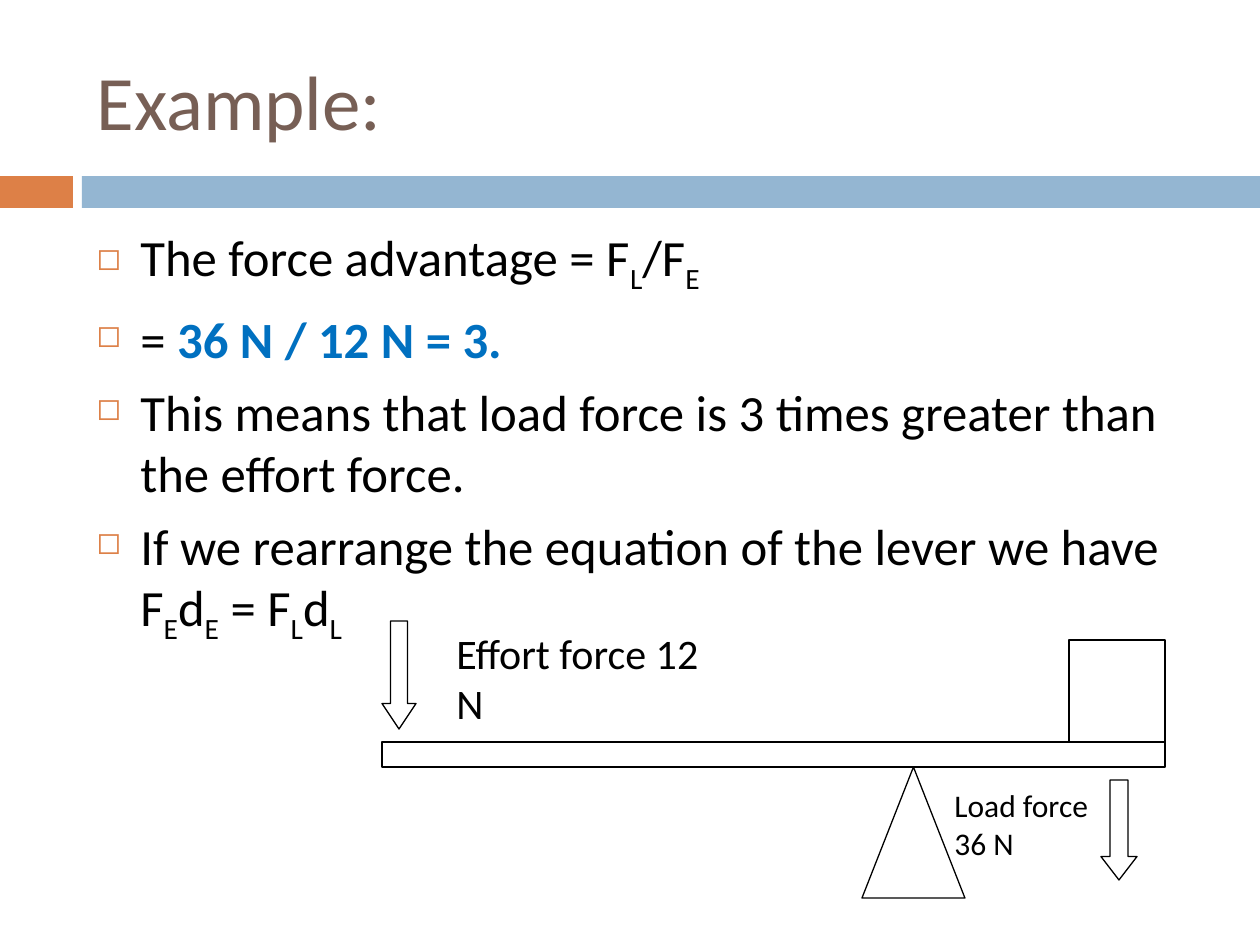
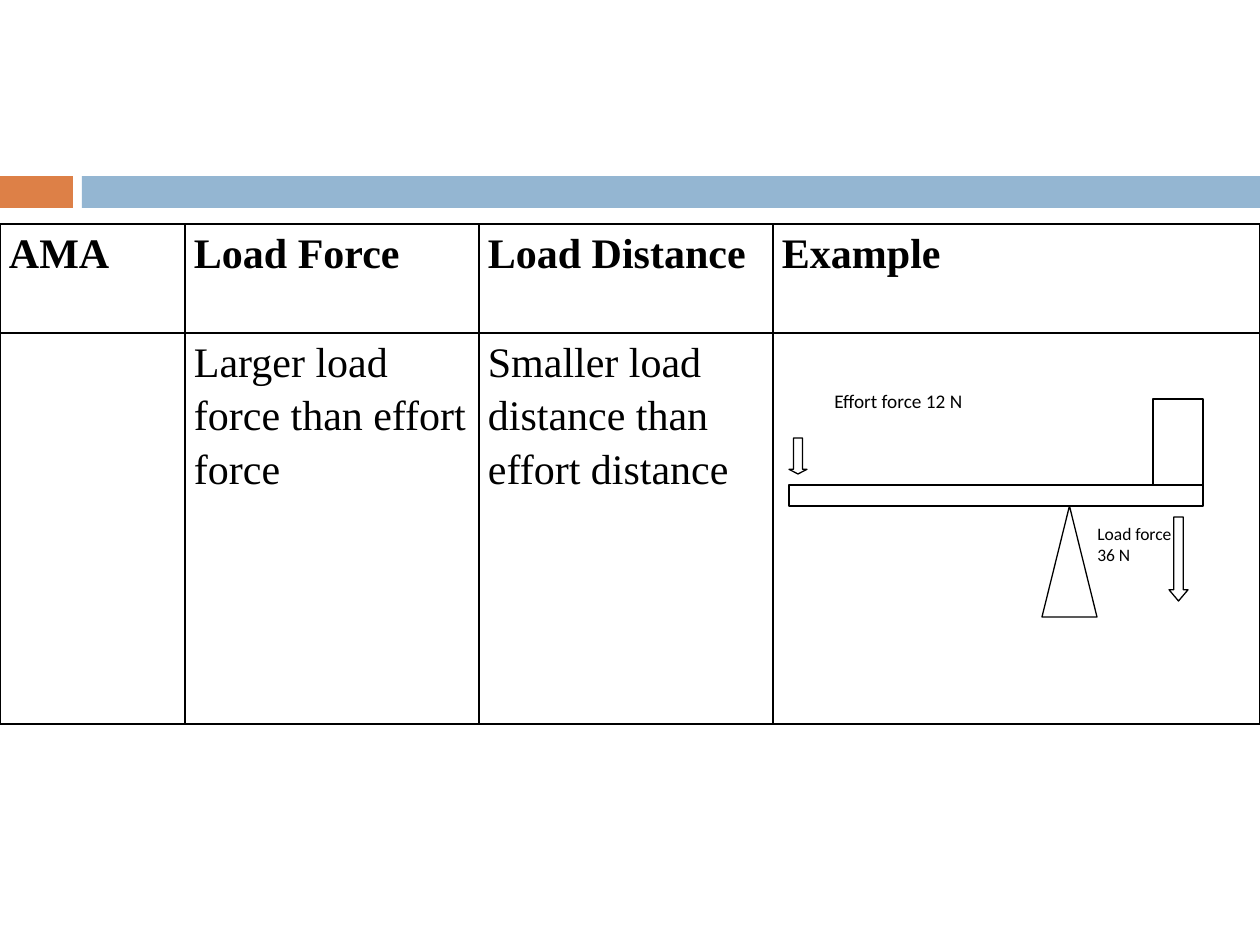
import pptx
import pptx.dml.color
import pptx.enum.shapes
import pptx.enum.text
import pptx.oxml
import pptx.oxml.ns
import pptx.util

SHAPE = pptx.enum.shapes.MSO_SHAPE
ANCHOR = pptx.enum.text.MSO_ANCHOR
ALIGN = pptx.enum.text.PP_ALIGN
Pt = pptx.util.Pt

PX_PER_INCH = 126
W, H = 1260, 945
BLACK, WHITE, ORANGE, BLUE, BROWN, ANSWER = (
    "000000", "FFFFFF", "DD8047", "94B6D2", "775F55", "0070C0")
SANS, SERIF = "Calibri", "Times New Roman"

BANDS = [(ORANGE, (0, 176, 73, 32)), (BLUE, (82, 176, 1178, 32))]

TITLE = "Example:"
TITLE_BOX = (84, 32, 1124, 136)
BODY_BOX = (84, 220, 1124, 620)
BULLETS = [  # each run: text, style
    [("The force advantage = F", ""), ("L", "sub"), ("/F", ""), ("E", "sub")],
    [("= ", ""), ("36 N / 12 N = 3.", "answer")],
    [("This means that load force is 3 times greater than the effort force.", "")],
    [("If we rearrange the equation of the lever we have F", ""), ("E", "sub"),
     ("d", ""), ("E", "sub"), (" = F", ""), ("L", "sub"), ("d", ""), ("L", "sub")],
]

TABLE_TOP = 224
COLUMNS = [185, 294, 294, 487]
ROWS = [109, 391]
CELLS = [
    ["AMA", "Load Force", "Load Distance", "Example"],
    ["", "Larger load force than effort force",
     "Smaller load distance than effort distance", ""],
]

LOAD_TEXT = ["Load force", "36 N"]
EFFORT_TEXT = ["Effort force 12 N"]
LARGE_LEVER = {
    "load label": (942, 780, 294, 118), "fulcrum": (862, 767, 103, 131),
    "beam": (382, 742, 783, 25), "load": (1069, 640, 96, 102),
    "load arrow": (1101, 780, 36, 100), "effort arrow": (382, 621, 34, 108),
    "effort label": (444, 621, 294, 66),
    "heads": (0.65, 0.75), "sizes": (18, 24),
}
SMALL_LEVER = {
    "load label": (1085, 517, 155, 100), "fulcrum": (1042, 506, 55, 111),
    "beam": (789, 485, 414, 21), "load": (1153, 399, 50, 86),
    "load arrow": (1169, 517, 19, 84), "effort arrow": (789, 438, 18, 36),
    "effort label": (822, 383, 155, 55),
    "heads": (0.59, 0.26), "sizes": (10, 11),
}


def px(n):
    return round(n * 914400 / PX_PER_INCH)


def emu(box):
    return [px(n) for n in box]


def rgb(color):
    return pptx.dml.color.RGBColor.from_string(color)


def set_all(obj, **values):
    for name, value in values.items():
        setattr(obj, name, value)


def add_run(p, text, size, color=BLACK, name=SANS, bold=False):
    r = p.add_run()
    r.text = text
    set_all(r.font, size=Pt(size), name=name, bold=bold)
    r.font.color.rgb = rgb(color)
    return r


def paragraphs(tf, count):
    return [tf.paragraphs[0]] + [tf.add_paragraph() for _ in range(count - 1)]


def add_xml(parent, tag, content="", **attrs):
    text = "".join(f' {k}="{v}"' for k, v in attrs.items())
    ns = pptx.oxml.ns.nsdecls("a")
    parent.append(pptx.oxml.parse_xml(f"<a:{tag} {ns}{text}>{content}</a:{tag}>"))


def add_shape(s, kind, box, fill=WHITE, line=BLACK):
    sp = s.shapes.add_shape(kind, *emu(box))
    sp.shadow.inherit = False
    sp.fill.solid()
    sp.fill.fore_color.rgb = rgb(fill)
    if line:
        sp.line.color.rgb = rgb(line)
        sp.line.width = Pt(0.75)
    else:
        sp.line.fill.background()
    return sp


def add_slide(prs, layout):
    s = prs.slides.add_slide(prs.slide_layouts.get_by_name(layout))
    for color, box in BANDS:
        add_shape(s, SHAPE.RECTANGLE, box, color, None)
    return s


def add_title(s):
    sp = s.shapes.title
    set_all(sp, **dict(zip(("left", "top", "width", "height"), emu(TITLE_BOX))))
    tf = sp.text_frame
    set_all(tf, vertical_anchor=ANCHOR.MIDDLE, word_wrap=True,
            auto_size=pptx.enum.text.MSO_AUTO_SIZE.NONE)
    p = tf.paragraphs[0]
    p.alignment = ALIGN.LEFT
    add_run(p, TITLE, 44, BROWN)


def add_bullets(s):
    tf = s.shapes.add_textbox(*emu(BODY_BOX)).text_frame
    tf.word_wrap = True
    for p, runs in zip(paragraphs(tf, len(BULLETS)), BULLETS):
        p.space_before = Pt(7)
        pPr = p._p.get_or_add_pPr()
        pPr.set("marL", str(px(44)))
        pPr.set("indent", str(px(-44)))
        add_xml(pPr, "buClr", f'<a:srgbClr val="{ORANGE}"/>')
        add_xml(pPr, "buSzPct", val=60000)
        add_xml(pPr, "buChar", char="◻")
        for text, style in runs:
            answer = style == "answer"
            r = add_run(p, text, 29, ANSWER if answer else BLACK, bold=answer)
            if style == "sub":
                r._r.get_or_add_rPr().set("baseline", "-25000")


def add_label(s, box, lines, size, space_after=0):
    tf = add_shape(s, SHAPE.RECTANGLE, box, line=WHITE).text_frame
    set_all(tf, word_wrap=True, vertical_anchor=ANCHOR.TOP)
    for p, text in zip(paragraphs(tf, len(lines)), lines):
        set_all(p, alignment=ALIGN.LEFT, space_after=Pt(space_after))
        add_run(p, text, size)


def add_lever(s, lever):
    load_size, effort_size = lever["sizes"]
    add_label(s, lever["load label"], LOAD_TEXT, load_size)
    add_shape(s, SHAPE.ISOSCELES_TRIANGLE, lever["fulcrum"])
    for part in ("beam", "load"):
        add_shape(s, SHAPE.RECTANGLE, lever[part])
    for part, head in zip(("load arrow", "effort arrow"), lever["heads"]):
        add_shape(s, SHAPE.DOWN_ARROW, lever[part]).adjustments[1] = head
    add_label(s, lever["effort label"], EFFORT_TEXT, effort_size, 10)


def add_table(s):
    box = (0, TABLE_TOP, sum(COLUMNS), sum(ROWS))
    table = s.shapes.add_table(len(ROWS), len(COLUMNS), *emu(box)).table
    set_all(table, first_row=False, horz_banding=False)
    for column, width in zip(table.columns, COLUMNS):
        column.width = px(width)
    for i, (row, height) in enumerate(zip(table.rows, ROWS)):
        row.height = px(height)
        for cell, text in zip(row.cells, CELLS[i]):
            set_all(cell, margin_left=px(9), margin_right=px(9),
                    margin_top=0, margin_bottom=0)
            tcPr = cell._tc.get_or_add_tcPr()
            for side in ("lnL", "lnR", "lnT", "lnB"):
                add_xml(tcPr, side, f'<a:solidFill><a:srgbClr val="{BLACK}"/></a:solidFill>',
                        w=Pt(1))
            cell.fill.background()
            if text:
                p = cell.text_frame.paragraphs[0]
                p.line_spacing = 1.15
                add_run(p, text, 24, name=SERIF, bold=i == 0)


def main():
    prs = pptx.Presentation()
    set_all(prs, slide_width=px(W), slide_height=px(H))

    s = add_slide(prs, "Title Only")
    add_title(s)
    add_bullets(s)
    add_lever(s, LARGE_LEVER)

    s = add_slide(prs, "Blank")
    add_table(s)
    add_lever(s, SMALL_LEVER)

    prs.save("out.pptx")


if __name__ == "__main__":
    main()
